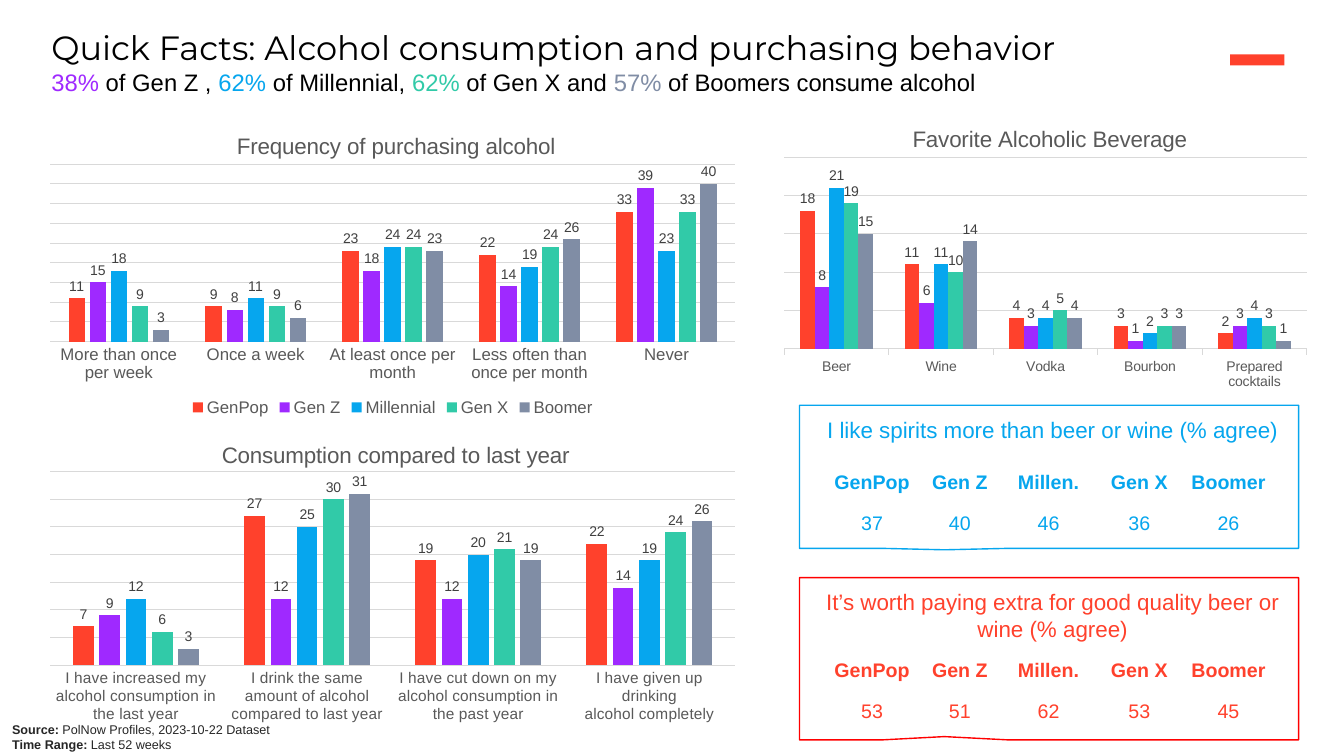
from lxml import etree
from pptx import Presentation
from pptx.chart.data import CategoryChartData
from pptx.dml.color import RGBColor
from pptx.enum import chart as charts, shapes, text
from pptx.oxml import parse_xml
from pptx.oxml.ns import nsdecls, qn
from pptx.util import Inches, Pt

RED = RGBColor(0xFF, 0x41, 0x2C)
PURPLE = RGBColor(0x9F, 0x29, 0xFF)
BLUE = RGBColor(0x06, 0xA6, 0xEE)
GREEN = RGBColor(0x31, 0xCA, 0xA8)
SLATE = RGBColor(0x80, 0x8D, 0xA5)
BLACK = RGBColor(0, 0, 0)
INK = RGBColor(0x26, 0x26, 0x26)
LABEL_GRAY = RGBColor(0x40, 0x40, 0x40)
AXIS_GRAY = RGBColor(0x59, 0x59, 0x59)
GRID_GRAY = RGBColor(0xD9, 0xD9, 0xD9)
PURE_RED = RGBColor(0xFF, 0, 0)

GENERATIONS = {"GenPop": RED, "Gen Z": PURPLE, "Millennial": BLUE,
               "Gen X": GREEN, "Boomer": SLATE}
TABLE_HEADS = ["GenPop", "Gen Z", "Millen.", "Gen X", "Boomer"]
COLUMN_WIDTHS = [0.96, 0.78, 0.98, 0.82, 0.95]
ROW_HEIGHT = 0.41
NO_TABLE_STYLE = "{2D5ABB26-0587-4C30-8999-92F81FD0307C}"


def style_font(font, size, color, bold=False, name="Arial"):
    font.size, font.bold, font.name = Pt(size), bold, name
    font.color.rgb = color


def add_span(para, words, **style):
    span = para.add_run()
    span.text = words
    style_font(span.font, **style)


def add_text_box(page, left, top, width, height, margin=None):
    box = page.shapes.add_textbox(Inches(left), Inches(top), Inches(width), Inches(height))
    frame = box.text_frame
    frame.word_wrap = True
    if margin is not None:
        frame.margin_left = frame.margin_right = Inches(margin)
        frame.margin_top = frame.margin_bottom = Inches(margin)
    return frame


def set_layout(parent, before, inner=False, **fractions):
    """Place a chart part by fractions of the chart's size."""
    for old in parent.findall(qn("c:layout")):
        parent.remove(old)
    layout = parse_xml(f"<c:layout {nsdecls('c')}><c:manualLayout/></c:layout>")
    manual = layout[0]
    if inner:
        etree.SubElement(manual, qn("c:layoutTarget")).set("val", "inner")
    for mode in ("xMode", "yMode"):
        etree.SubElement(manual, qn(f"c:{mode}")).set("val", "edge")
    for key, value in fractions.items():
        etree.SubElement(manual, qn(f"c:{key}")).set("val", f"{value:.4f}")
    if before is None:
        parent.insert(0, layout)
    else:
        before.addnext(layout)


def add_heading(page, left, top, width, height):
    frame = add_text_box(page, left, top, width, height, margin=0)
    add_span(frame.paragraphs[0], "Quick Facts: Alcohol consumption and purchasing behavior",
             size=24, color=BLACK, name="Montserrat")
    para = frame.add_paragraph()
    for share, words, color in [("38% ", "of Gen Z , ", PURPLE),
                                ("62% ", "of Millennial, ", BLUE),
                                ("62% ", "of Gen X and ", GREEN),
                                ("57% ", "of Boomers consume alcohol", SLATE)]:
        add_span(para, share, size=17, color=color)
        add_span(para, words, size=17, color=BLACK)


def add_source(page, left, top, width, height):
    frame = add_text_box(page, left, top, width, height, margin=0)
    lines = [("Source: ", "PolNow Profiles, 2023-10-22 Dataset"),
             ("Time Range: ", "Last 52 weeks")]
    for index, (label, words) in enumerate(lines):
        para = frame.add_paragraph() if index else frame.paragraphs[0]
        add_span(para, label, size=9, color=INK, bold=True)
        add_span(para, words, size=9, color=INK)


def add_column_chart(page, left, top, width, height, title, title_left, groups, plot,
                     maximum, category_size, overlap=-27, ticks=False, legend=False):
    """Draw clustered columns; title_left and plot are inches inside the box."""
    data = CategoryChartData()
    data.categories = list(groups)
    for name, values in zip(GENERATIONS, zip(*groups.values())):
        data.add_series(name, values)
    chart = page.shapes.add_chart(
        charts.XL_CHART_TYPE.COLUMN_CLUSTERED, Inches(left), Inches(top),
        Inches(width), Inches(height), data).chart
    style_font(chart.font, 10, BLACK)

    # Title and plot area
    chart.has_title = True
    add_span(chart.chart_title.text_frame.paragraphs[0], title, size=16, color=AXIS_GRAY)
    title_part = chart._chartSpace.chart.find(qn("c:title"))
    set_layout(title_part, title_part.find(qn("c:tx")), x=title_left / width, y=0.15 / height)
    plot_left, plot_top, plot_width, plot_height = plot
    set_layout(chart._chartSpace.chart.plotArea, None, inner=True,
               x=plot_left / width, y=plot_top / height,
               w=plot_width / width, h=plot_height / height)

    # Axes
    categories, values = chart.category_axis, chart.value_axis
    mark = charts.XL_TICK_MARK
    categories.major_tick_mark = mark.OUTSIDE if ticks else mark.NONE
    style_font(categories.tick_labels.font, category_size, AXIS_GRAY)
    values.visible = False
    values.minimum_scale, values.maximum_scale, values.major_unit = 0, maximum, 5
    values.has_major_gridlines = True
    for line in (categories.format.line, values.major_gridlines.format.line):
        line.color.rgb = GRID_GRAY
        line.width = Pt(0.75)

    # Columns and their labels
    bars = chart.plots[0]
    bars.gap_width, bars.overlap, bars.vary_by_categories = 219, overlap, False
    for series, color in zip(bars.series, GENERATIONS.values()):
        series.format.fill.solid()
        series.format.fill.fore_color.rgb = color
        series.invert_if_negative = False
        labels = series.data_labels
        labels.show_value = True
        labels.position = charts.XL_LABEL_POSITION.OUTSIDE_END
        style_font(labels.font, 10, LABEL_GRAY)

    chart.has_legend = legend
    if legend:
        chart.legend.position = charts.XL_LEGEND_POSITION.BOTTOM
        chart.legend.include_in_layout = False
        style_font(chart.legend.font, 12, AXIS_GRAY)


def add_agree_panel(page, left, top, width, height, statement, figures, color, outline,
                    pointer, table_top):
    # Frame
    frame = page.shapes.add_shape(shapes.MSO_SHAPE.RECTANGULAR_CALLOUT, Inches(left),
                                  Inches(top), Inches(width), Inches(height))
    frame.shadow.inherit = False
    frame.fill.background()
    frame.line.color.rgb = outline
    frame.line.width = Pt(1)
    frame.adjustments[0], frame.adjustments[1] = pointer

    # Statement
    words = add_text_box(page, left + 0.07, top + 0.06, width - 0.07, 0.37)
    words.paragraphs[0].alignment = text.PP_ALIGN.CENTER
    add_span(words.paragraphs[0], statement, size=16, color=color)

    # Figures by generation
    table = page.shapes.add_table(2, len(TABLE_HEADS), Inches(left + 0.24),
                                  Inches(top + table_top), Inches(sum(COLUMN_WIDTHS)),
                                  Inches(2 * ROW_HEIGHT)).table
    table.first_row = table.horz_banding = False
    table._tbl.tblPr.find(qn("a:tableStyleId")).text = NO_TABLE_STYLE
    for column, column_width in zip(table.columns, COLUMN_WIDTHS):
        column.width = Inches(column_width)
    for row_index, row in enumerate([TABLE_HEADS, figures]):
        table.rows[row_index].height = Inches(ROW_HEIGHT)
        for column_index, entry in enumerate(row):
            cell = table.cell(row_index, column_index)
            cell.fill.background()
            para = cell.text_frame.paragraphs[0]
            para.alignment = text.PP_ALIGN.CENTER
            add_span(para, str(entry), size=14, color=color, bold=row_index == 0)


def add_brand_mark(page, left, top, width, height):
    mark = page.shapes.add_shape(shapes.MSO_SHAPE.RECTANGLE, Inches(left), Inches(top),
                                 Inches(width), Inches(height))
    mark.shadow.inherit = False
    mark.fill.solid()
    mark.fill.fore_color.rgb = RED
    mark.line.fill.background()


def main():
    deck = Presentation()
    deck.slide_width, deck.slide_height = Inches(13.33), Inches(7.5)
    page = deck.slides.add_slide(deck.slide_layouts[6])
    add_brand_mark(page, 12.2, 0.54, 0.54, 0.11)
    add_column_chart(
        page, 0.35, 1.12, 7.09, 3.05, "Frequency of purchasing alcohol", 1.96,
        {"More than once per week": (11, 15, 18, 9, 3), "Once a week": (9, 8, 11, 9, 6),
         "At least once per month": (23, 18, 24, 24, 23),
         "Less often than once per month": (22, 14, 19, 24, 26),
         "Never": (33, 39, 23, 33, 40)},
        plot=(0.15, 0.51, 6.79, 1.76), maximum=45, category_size=12, legend=True)
    add_column_chart(
        page, 0.35, 4.18, 7.09, 3.05, "Consumption compared to last year", 1.81,
        {"I have increased my alcohol consumption in the last year": (7, 9, 12, 6, 3),
         "I drink the same amount of alcohol compared to last year": (27, 12, 25, 30, 31),
         "I have cut down on my\nalcohol consumption in the past year": (19, 12, 20, 21, 19),
         "I have given up drinking\nalcohol completely": (22, 14, 19, 24, 26)},
        plot=(0.15, 0.5, 6.79, 1.92), maximum=35, category_size=11)
    add_column_chart(
        page, 7.67, 1.05, 5.4, 2.89, "Favorite Alcoholic Beverage", 1.34,
        {"Beer": (18, 8, 21, 19, 15), "Wine": (11, 6, 11, 10, 14), "Vodka": (4, 3, 4, 5, 4),
         "Bourbon": (3, 1, 2, 3, 3), "Prepared cocktails": (2, 3, 4, 3, 1)},
        plot=(0.11, 0.51, 5.18, 1.9), maximum=25, category_size=10, overlap=0, ticks=True)
    add_heading(page, 0.51, 0.27, 11.67, 1.03)
    add_source(page, 0.12, 7.16, 4.77, 0.3)
    add_agree_panel(page, 7.93, 4.02, 4.95, 1.42,
                    "I like spirits more than beer or wine (% agree)",
                    [37, 40, 46, 36, 26], BLUE, BLUE, (-0.21, 0.51), table_top=0.61)
    add_agree_panel(page, 7.93, 5.73, 4.95, 1.61,
                    "It’s worth paying extra for good quality beer or wine (% agree)",
                    [53, 51, 62, 53, 45], RED, PURE_RED, (-0.21, 0.48), table_top=0.76)
    deck.save("out.pptx")


if __name__ == "__main__":
    main()
